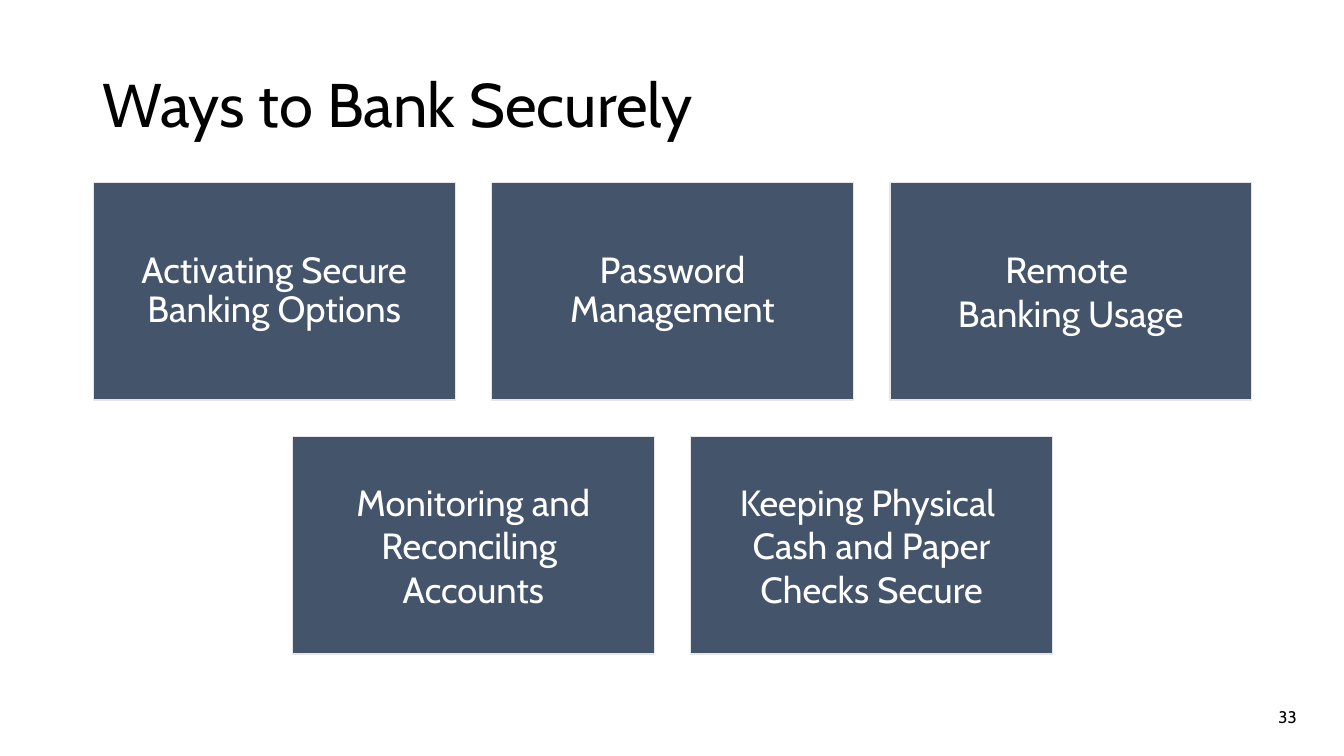
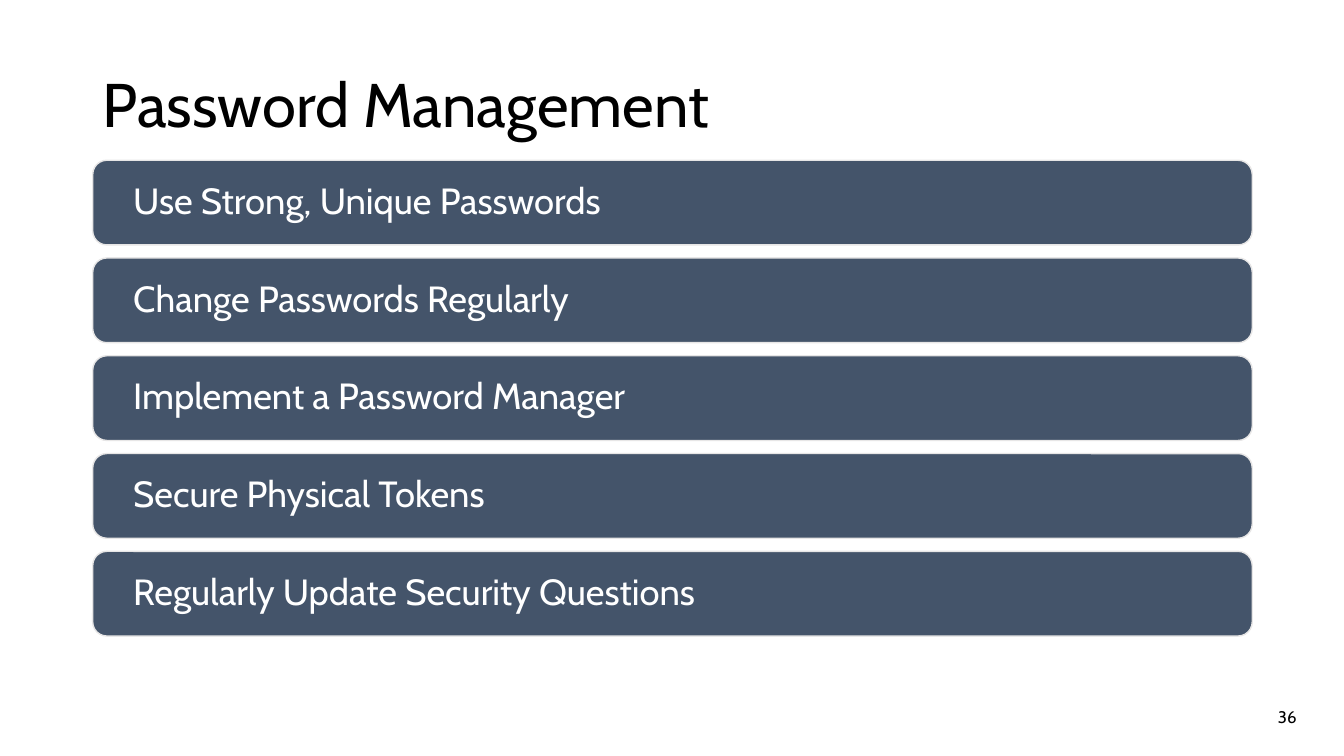
from pptx import Presentation
from pptx import util as u
from pptx.dml.color import RGBColor
from pptx.enum import shapes, text

SCALE = 9144
SLIDE_WIDTH, SLIDE_HEIGHT = 1333, 750
LEFT, CONTENT_WIDTH = 92, 1150
CARD_WIDTH, CARD_HEIGHT, CARD_GAP, CARD_TOP = 359, 216, 36, 181
BAR_HEIGHT, BAR_PITCH, BAR_TOP = 84, 97, 159

FONT = "Cabin"
SLATE = RGBColor(0x44, 0x54, 0x6A)
PALE_GRAY = RGBColor(0xE7, 0xE6, 0xE6)
WHITE = RGBColor(0xFF, 0xFF, 0xFF)
BLACK = RGBColor(0, 0, 0)

CARD_ROWS = [
    [
        (["Activating Secure Banking Options"], 0.9),
        (["Password Management"], 0.9),
        (["Remote ", "Banking Usage"], 1.0),
    ],
    [
        (["Monitoring and Reconciling ", "Accounts"], 1.0),
        (["Keeping Physical ", "Cash and Paper Checks Secure"], 1.0),
    ],
]
PASSWORD_TIPS = [
    "Use Strong, Unique Passwords",
    "Change Passwords Regularly",
    "Implement a Password Manager",
    "Secure Physical Tokens",
    "Regularly Update Security Questions",
]


def px(length):
    return u.Emu(round(length * SCALE))


def write_text(shape, lines, size=26, color=WHITE, align=text.PP_ALIGN.LEFT,
               anchor=text.MSO_ANCHOR.MIDDLE, spacing=1.0,
               margins=(10, 5, 10, 5)):
    frame = shape.text_frame
    frame.word_wrap = True
    frame.auto_size = text.MSO_AUTO_SIZE.NONE
    frame.vertical_anchor = anchor
    (frame.margin_left, frame.margin_top,
     frame.margin_right, frame.margin_bottom) = map(px, margins)
    frame.text = "\n".join(lines)
    for paragraph in frame.paragraphs:
        paragraph.alignment = align
        paragraph.line_spacing = spacing
        paragraph.font.name = FONT
        paragraph.font.size = u.Pt(size)
        paragraph.font.color.rgb = color


def add_panel(slide, kind, left, top, width, height):
    panel = slide.shapes.add_shape(kind, *map(px, (left, top, width, height)))
    panel.shadow.inherit = False
    panel.fill.solid()
    panel.fill.fore_color.rgb = SLATE
    panel.line.color.rgb = PALE_GRAY
    panel.line.width = u.Pt(1)
    return panel


def add_slide(presentation, title, number):
    slide = presentation.slides.add_slide(presentation.slide_layouts[5])
    heading = slide.shapes.title
    heading.left, heading.top, heading.width, heading.height = map(
        px, (LEFT, 0, CONTENT_WIDTH, 145))
    write_text(heading, [title], size=44, color=BLACK, spacing=0.9,
               anchor=text.MSO_ANCHOR.BOTTOM)
    page_number = slide.shapes.add_textbox(*map(px, (996, 691, 300, 40)))
    write_text(page_number, [str(number)], size=12, color=BLACK,
               align=text.PP_ALIGN.RIGHT)
    return slide


def add_card_rows(slide, rows):
    pitch = CARD_WIDTH + CARD_GAP
    for row_index, row in enumerate(rows):
        row_width = len(row) * pitch - CARD_GAP
        row_left = LEFT + (CONTENT_WIDTH - row_width) / 2
        top = CARD_TOP + row_index * (CARD_HEIGHT + CARD_GAP)
        for column, (lines, spacing) in enumerate(row):
            card = add_panel(slide, shapes.MSO_SHAPE.RECTANGLE,
                             row_left + column * pitch, top,
                             CARD_WIDTH, CARD_HEIGHT)
            write_text(card, lines, align=text.PP_ALIGN.CENTER,
                       spacing=spacing, margins=(11, 11, 11, 11))


def add_bars(slide, labels):
    for index, label in enumerate(labels):
        bar = add_panel(slide, shapes.MSO_SHAPE.ROUNDED_RECTANGLE,
                        LEFT, BAR_TOP + index * BAR_PITCH,
                        CONTENT_WIDTH, BAR_HEIGHT)
        write_text(bar, [label], spacing=0.9, margins=(36, 11, 11, 11))


def main():
    presentation = Presentation()
    presentation.slide_width = px(SLIDE_WIDTH)
    presentation.slide_height = px(SLIDE_HEIGHT)
    add_card_rows(add_slide(presentation, "Ways to Bank Securely", 33), CARD_ROWS)
    add_bars(add_slide(presentation, "Password Management", 36), PASSWORD_TIPS)
    presentation.save("out.pptx")


if __name__ == "__main__":
    main()
